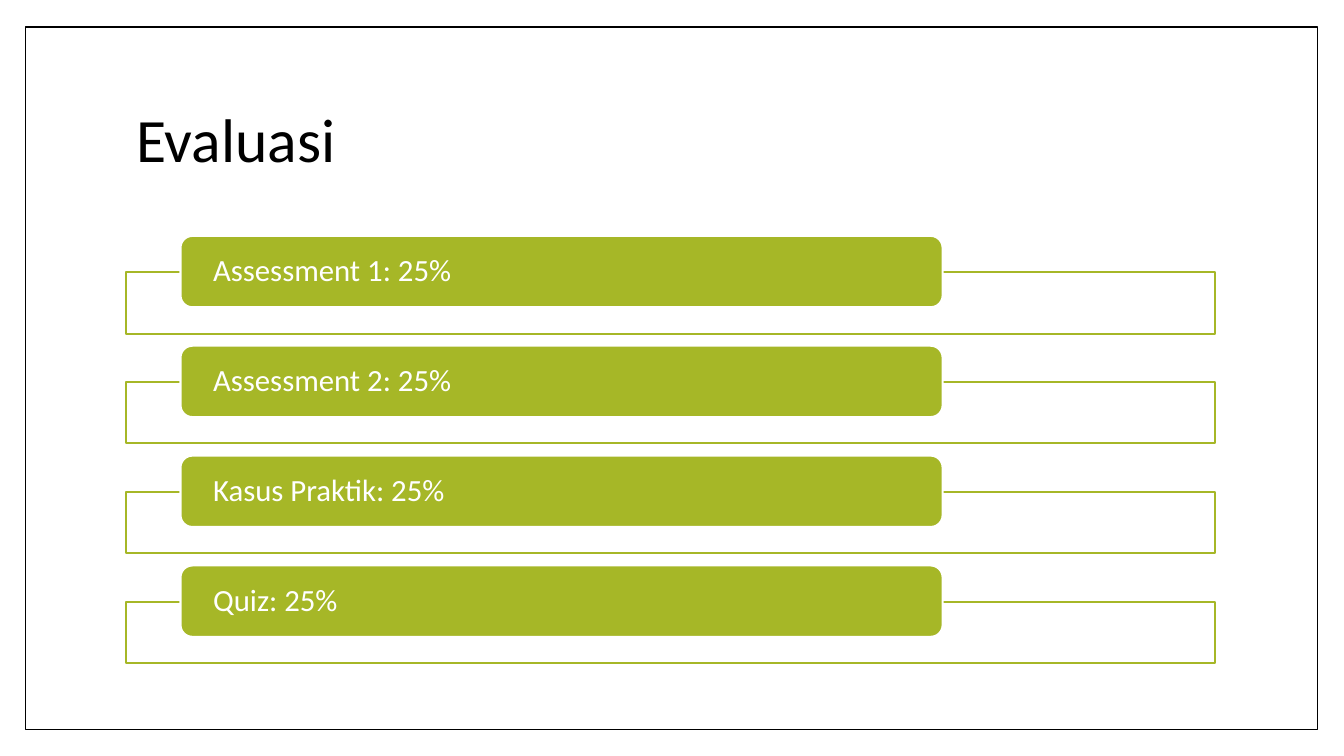
from lxml import etree
from pptx import Presentation
from pptx.dml.color import RGBColor
from pptx.enum.shapes import MSO_SHAPE
from pptx.enum.text import MSO_ANCHOR, PP_ALIGN
from pptx.oxml.ns import qn
from pptx.util import Inches, Pt

RECTANGLE, ROUNDED = MSO_SHAPE.RECTANGLE, MSO_SHAPE.ROUNDED_RECTANGLE
MIDDLE, LEFT = MSO_ANCHOR.MIDDLE, PP_ALIGN.LEFT
TITLE_ONLY = 5

BLACK = RGBColor(0x00, 0x00, 0x00)
WHITE = RGBColor(0xFF, 0xFF, 0xFF)
GREEN = RGBColor(0xA6, 0xB7, 0x27)

SLIDE_WIDTH, SLIDE_HEIGHT = 13.33, 7.5
FRAME_BOX = (0.25, 0.27, 12.82, 6.97)
TITLE_BOX = (1.25, 0.67, 10.8, 1.48)
LIST_BOX = (1.25, 2.34, 10.8, 4.36)

ASSESSMENTS = ["Assessment 1: 25%", "Assessment 2: 25%", "Kasus Praktik: 25%", "Quiz: 25%"]


def add_box(slide, preset, box, fill, line, line_width):
    shape = slide.shapes.add_shape(preset, *map(Inches, box))
    shape.shadow.inherit = False
    shape.fill.solid()
    shape.fill.fore_color.rgb = fill
    shape.line.color.rgb = line
    shape.line.width = Pt(line_width)
    return shape


def set_text(shape, text, size, color, margins):
    """Write one left-aligned, vertically centred line; margins are in inches."""
    frame = shape.text_frame
    frame.text = text
    paragraph = frame.paragraphs[0]
    side, top = map(Inches, margins)
    formats = [
        (frame, {"word_wrap": True, "vertical_anchor": MIDDLE,
                 "margin_left": side, "margin_right": side,
                 "margin_top": top, "margin_bottom": top}),
        (paragraph, {"alignment": LEFT, "line_spacing": 0.9}),
        (paragraph.runs[0].font, {"name": "Calibri", "size": Pt(size)}),
    ]
    for target, values in formats:
        for attribute, value in values.items():
            setattr(target, attribute, value)
    paragraph.runs[0].font.color.rgb = color


def set_opacity(shape, percent):
    color = shape.fill._xPr.find(qn("a:solidFill"))[0]
    etree.SubElement(color, qn("a:alpha"), val=str(percent * 1000))


def add_title(slide, box):
    title = slide.shapes.title
    for attribute, value in zip(("left", "top", "width", "height"), box):
        setattr(title, attribute, Inches(value))
    set_text(title, "Evaluasi", 44, BLACK, (0.1, 0.05))


def add_frame(slide, box):
    frame = add_box(slide, RECTANGLE, box, WHITE, BLACK, 1)
    slide.shapes.title.element.addprevious(frame.element)


def add_assessment(slide, box, text):
    """Draw an outlined bar with a green label overlapping its top edge."""
    left, top, width, height = box
    bar_box = (left, top + 0.33 * height, width, 0.56 * height)
    bar = add_box(slide, RECTANGLE, bar_box, WHITE, GREEN, 1.5)
    set_opacity(bar, 90)
    label_box = (left + 0.05 * width, top, 0.7 * width, 0.65 * height)
    label = add_box(slide, ROUNDED, label_box, GREEN, WHITE, 1.5)
    set_text(label, text, 22, WHITE, (0.29, 0))


def add_assessment_list(slide, box, assessments):
    left, top, width, height = box
    row_height = height / len(assessments)
    for row, text in enumerate(assessments):
        add_assessment(slide, (left, top + row * row_height, width, row_height), text)


def main():
    presentation = Presentation()
    presentation.slide_width = Inches(SLIDE_WIDTH)
    presentation.slide_height = Inches(SLIDE_HEIGHT)
    slide = presentation.slides.add_slide(presentation.slide_layouts[TITLE_ONLY])
    slide.background.fill.solid()
    slide.background.fill.fore_color.rgb = WHITE
    add_frame(slide, FRAME_BOX)
    add_title(slide, TITLE_BOX)
    add_assessment_list(slide, LIST_BOX, ASSESSMENTS)
    presentation.save("out.pptx")


if __name__ == "__main__":
    main()
